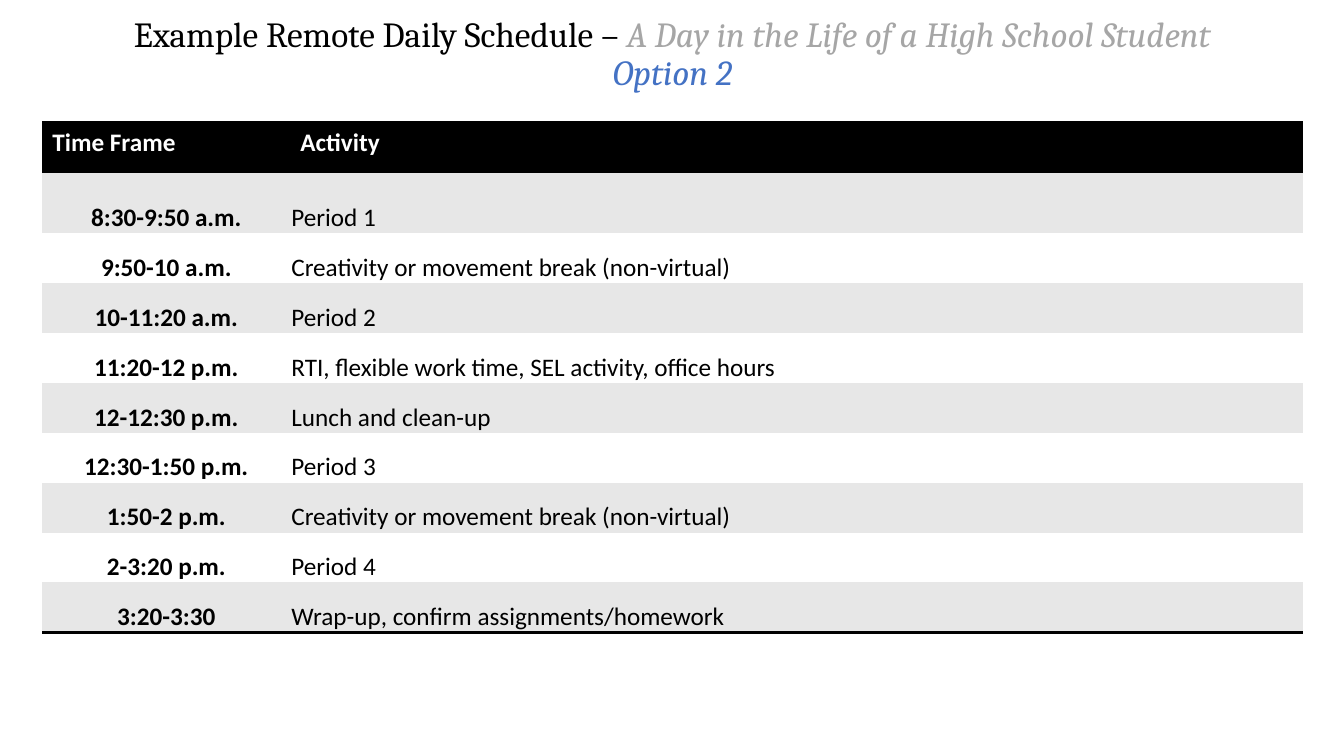
import pptx
import pptx.util
import pptx.dml.color
import pptx.enum.text
import pptx.oxml
import pptx.oxml.ns
from dataclasses import dataclass

TITLE = [
    # text, theme colour, italic
    ("Example Remote Daily Schedule – ", "black", False),
    ("A Day in the Life of a High School Student ", "grey", True),
    ("Option 2", "blue", True),
]
HEADER = ("Time Frame", "Activity")
SCHEDULE = [
    ("8:30-9:50 a.m.", "Period 1"),
    ("9:50-10 a.m.", "Creativity or movement break (non-virtual)"),
    ("10-11:20 a.m.", "Period 2"),
    ("11:20-12 p.m.", "RTI, flexible work time, SEL activity, office hours"),
    ("12-12:30 p.m.", "Lunch and clean-up"),
    ("12:30-1:50 p.m.", "Period 3"),
    ("1:50-2 p.m.", "Creativity or movement break (non-virtual)"),
    ("2-3:20 p.m.", "Period 4"),
    ("3:20-3:30", "Wrap-up, confirm assignments/homework"),
]


@dataclass(frozen=True)
class Theme:
    black: str = "000000"
    white: str = "FFFFFF"
    grey: str = "A6A6A6"
    blue: str = "4472C4"
    bands: tuple = ("E7E7E7", "FFFFFF")
    title_font: str = "Cambria"
    body_font: str = "Calibri"
    title_size: float = 25.2
    body_size: float = 18
    rule: float = 2


THEME = Theme()
WIDTH, HEIGHT = 13.33, 7.5
TABLE_LEFT, TABLE_TOP, TABLE_WIDTH = 0.42, 1.21, 12.5
TIME_COLUMN = 2.46
ROW, FIRST_PERIOD_ROW = 0.495, 0.61
CELL_INSET = 0.01
PLAIN_TABLE = "{2D5ABB26-0587-4C30-8999-92F81FD0307C}"

Inches, Pt = pptx.util.Inches, pptx.util.Pt
Align, Anchor = pptx.enum.text.PP_ALIGN, pptx.enum.text.MSO_ANCHOR
rgb = pptx.dml.color.RGBColor.from_string


def style_run(r, font, size, color, bold=False, italic=False):
    r.font.name, r.font.size = font, Pt(size)
    r.font.bold, r.font.italic = bold, italic
    r.font.color.rgb = rgb(color)


def add_rules(cell, edges):
    """Draw a black line on each named edge (lnT, lnB); call before filling."""
    for edge in edges:
        cell._tc.get_or_add_tcPr().append(pptx.oxml.parse_xml(
            f'<a:{edge} {pptx.oxml.ns.nsdecls("a")} w="{Pt(THEME.rule)}">'
            f'<a:solidFill><a:srgbClr val="{THEME.black}"/></a:solidFill></a:{edge}>'))


def add_title(s):
    tf = s.shapes.add_textbox(Inches(0.92), Inches(0.12),
                              Inches(11.5), Inches(0.86)).text_frame
    tf.word_wrap = True
    tf.vertical_anchor = Anchor.MIDDLE
    p = tf.paragraphs[0]
    p.alignment, p.line_spacing = Align.CENTER, 0.9
    for text, color, italic in TITLE:
        r = p.add_run()
        r.text = text
        style_run(r, THEME.title_font, THEME.title_size,
                  getattr(THEME, color), italic=italic)


def add_schedule(s):
    rows = [HEADER] + SCHEDULE
    heights = [ROW, FIRST_PERIOD_ROW] + [ROW] * (len(SCHEDULE) - 1)
    frame = s.shapes.add_table(len(rows), len(HEADER), Inches(TABLE_LEFT),
                               Inches(TABLE_TOP), Inches(TABLE_WIDTH),
                               Inches(sum(heights)))
    table = frame.table
    table.horz_banding = False
    next(frame._element.iter(pptx.oxml.ns.qn("a:tableStyleId"))).text = PLAIN_TABLE
    table.columns[0].width = Inches(TIME_COLUMN)
    table.columns[1].width = Inches(TABLE_WIDTH - TIME_COLUMN)

    for i, row in enumerate(rows):
        table.rows[i].height = Inches(heights[i])
        header, last = i == 0, i == len(rows) - 1
        for j, text in enumerate(row):
            cell = table.cell(i, j)
            cell.text_frame.text = text
            p = cell.text_frame.paragraphs[0]
            if not header:
                cell.vertical_anchor = Anchor.BOTTOM
                cell.margin_left = cell.margin_right = Inches(CELL_INSET)
                cell.margin_top, cell.margin_bottom = Inches(CELL_INSET), 0
                p.alignment = Align.CENTER if j == 0 else Align.LEFT
            add_rules(cell, ("lnT", "lnB") if header else ("lnB",) if last else ())
            cell.fill.solid()
            cell.fill.fore_color.rgb = rgb(
                THEME.black if header else THEME.bands[(i - 1) % 2])
            style_run(p.runs[0], THEME.body_font, THEME.body_size,
                      THEME.white if header else THEME.black,
                      bold=header or j == 0)


def main():
    prs = pptx.Presentation()
    prs.slide_width, prs.slide_height = Inches(WIDTH), Inches(HEIGHT)
    s = prs.slides.add_slide(prs.slide_layouts[6])
    add_title(s)
    add_schedule(s)
    prs.save("out.pptx")


if __name__ == "__main__":
    main()
